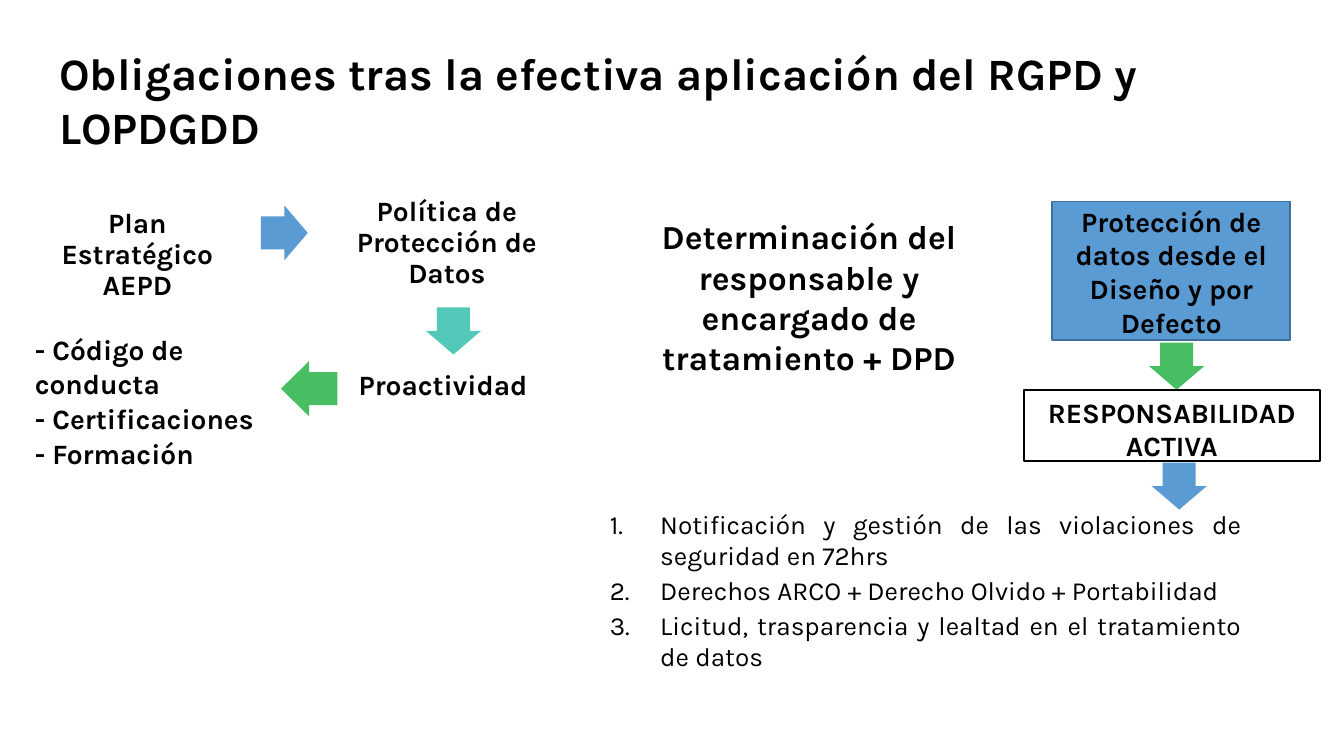
from lxml.etree import SubElement
from pptx import Presentation
from pptx.dml.color import RGBColor
from pptx.enum.shapes import MSO_SHAPE as SHAPE
from pptx.enum.text import MSO_ANCHOR as ANCHOR, MSO_AUTO_SIZE as AUTO, PP_ALIGN as ALIGN
from pptx.oxml.ns import qn
from pptx.util import Pt

BLACK = RGBColor(0x00, 0x00, 0x00)
BLUE = RGBColor(0x5B, 0x9B, 0xD4)
NAVY = RGBColor(0x41, 0x70, 0x9C)
TEAL = RGBColor(0x52, 0xC9, 0xB8)
GREEN = RGBColor(0x48, 0xBE, 0x63)
FONT = "Karla"
DEFAULT_INSETS = (7.2, 3.6, 7.2, 3.6)
ARROW_LENGTH, ARROW_SPAN = 25.2, 29.5


def place(sp, x, y, w, h):
    """Move and size a shape, in points."""
    sp.left, sp.top, sp.width, sp.height = Pt(x), Pt(y), Pt(w), Pt(h)


def write(sp, lines, size=15, bold=True, align=ALIGN.CENTER, before=1, spacing=1.0,
          insets=DEFAULT_INSETS):
    """Fill a shape with one formatted paragraph per line."""
    tf = sp.text_frame
    tf.text = "\n".join(lines)
    tf.word_wrap = True
    tf.auto_size = AUTO.NONE
    tf.vertical_anchor = ANCHOR.TOP
    tf.margin_left, tf.margin_top, tf.margin_right, tf.margin_bottom = map(Pt, insets)
    for p in tf.paragraphs:
        p.alignment = align
        p.space_before = Pt(before)
        p.line_spacing = spacing
        for r in p.runs:
            r.font.name, r.font.size, r.font.bold = FONT, Pt(size), bold
            r.font.color.rgb = BLACK


def add_text(s, box, lines, **style):
    """Add a text box."""
    write(s.shapes.add_textbox(*map(Pt, box)), lines, **style)


def add_block(s, kind, box, fill=None, line=None):
    """Add a flat preset shape with an optional fill and outline."""
    sp = s.shapes.add_shape(kind, *map(Pt, box))
    sp.shadow.inherit = False
    if fill is None:
        sp.fill.background()
    else:
        sp.fill.solid()
        sp.fill.fore_color.rgb = fill
    if line is None:
        sp.line.fill.background()
    else:
        sp.line.color.rgb = line
        sp.line.width = Pt(0.96)
    return sp


def add_arrow(s, kind, x, y, w, h, color):
    """Add a block arrow."""
    sp = add_block(s, kind, (x, y, w, h), color)
    sp.adjustments[0] = 0.6
    sp.adjustments[1] = 0.5 * (h if kind == SHAPE.DOWN_ARROW else w) / min(w, h)


def add_title(s, x, y, w, h):
    """Set the slide title."""
    place(s.shapes.title, x, y, w, h)
    write(s.shapes.title, ["Obligaciones tras la efectiva aplicación del RGPD y LOPDGDD"],
          size=24, align=ALIGN.LEFT, insets=(0.7, 0.7, 0, 0))


def add_strategy(s, x, y, w, h):
    """Draw the loop from the strategic plan to the codes of conduct."""
    add_text(s, (x + 3.6, y + 8, 104, 53), ["Plan Estratégico AEPD"],
             before=2.3, spacing=0.92, insets=(0, 2, 0, 0))
    add_arrow(s, SHAPE.RIGHT_ARROW, x + 121.7, y + 8, ARROW_LENGTH, ARROW_SPAN, BLUE)
    add_text(s, (x + w - 134.6, y, 126, 58), ["Política de Protección de Datos"],
             before=2.2, spacing=0.92)
    add_arrow(s, SHAPE.DOWN_ARROW, x + 210.2, y + 62.7, ARROW_SPAN, ARROW_LENGTH, TEAL)
    add_text(s, (x + w - 126, y + 91.5, 126, 25), ["Proactividad"], align=ALIGN.LEFT)
    add_arrow(s, SHAPE.LEFT_ARROW, x + 132.5, y + 91.5, 30.2, ARROW_SPAN, GREEN)
    add_text(s, (x, y + h - 75.6, 138, 75.6),
             ["- Código de conducta", "- Certificaciones", "- Formación"],
             align=ALIGN.LEFT, insets=(0.7, 0.7, 0, 0))


def add_roles(s, x, y, w, h):
    """State the roles to be determined."""
    add_text(s, (x, y, w, h),
             ["Determinación del responsable y encargado de tratamiento + DPD"], size=18)


def add_responsibility(s, x, y, w, h):
    """Draw the chain from data protection by design to active responsibility."""
    sp = add_block(s, SHAPE.RECTANGLE, (x + 15.2, y, 127.4, 74.2), BLUE, NAVY)
    write(sp, ["Protección de datos desde el Diseño y por Defecto"],
          before=1.8, insets=(6, 1.5, 6, 0))
    add_arrow(s, SHAPE.DOWN_ARROW, x + 67, y + 75.6, ARROW_SPAN, ARROW_LENGTH, GREEN)
    sp = add_block(s, SHAPE.RECTANGLE, (x, y + 100.8, w, 38.2), line=BLACK)
    write(sp, ["RESPONSABILIDAD", "ACTIVA"], before=0, insets=(0, 3, 0, 0))
    add_arrow(s, SHAPE.DOWN_ARROW, x + 68.4, y + h - ARROW_LENGTH,
              ARROW_SPAN, ARROW_LENGTH, BLUE)


def add_duties(s, x, y, w, h):
    """Write the numbered list of duties in the body placeholder."""
    sp = s.placeholders[1]
    place(sp, x, y, w, h)
    write(sp, ["Notificación y gestión de las violaciones de seguridad en 72hrs",
               "Derechos ARCO + Derecho Olvido + Portabilidad",
               "Licitud, trasparencia y lealtad en el tratamiento de datos"],
          size=14, bold=False, align=ALIGN.JUSTIFY, before=1.9)
    for p in sp.text_frame.paragraphs:
        pPr = p._p.get_or_add_pPr()
        pPr.set("marL", str(Pt(34)))
        pPr.set("indent", str(-Pt(27)))
        SubElement(pPr, qn("a:buFont"), typeface=FONT)
        SubElement(pPr, qn("a:buAutoNum"), type="arabicPeriod")


def main():
    """Build and save the slide."""
    prs = Presentation()
    prs.slide_width, prs.slide_height = Pt(720), Pt(405)
    s = prs.slides.add_slide(prs.slide_layouts[1])
    add_title(s, 31, 24, 649, 60)
    add_strategy(s, 18, 102, 293, 151)
    add_roles(s, 333.4, 112.3, 200, 94)
    add_responsibility(s, 548.6, 108, 158.4, 165)
    add_duties(s, 312.5, 268.6, 360, 96.5)
    prs.save("out.pptx")


if __name__ == "__main__":
    main()
